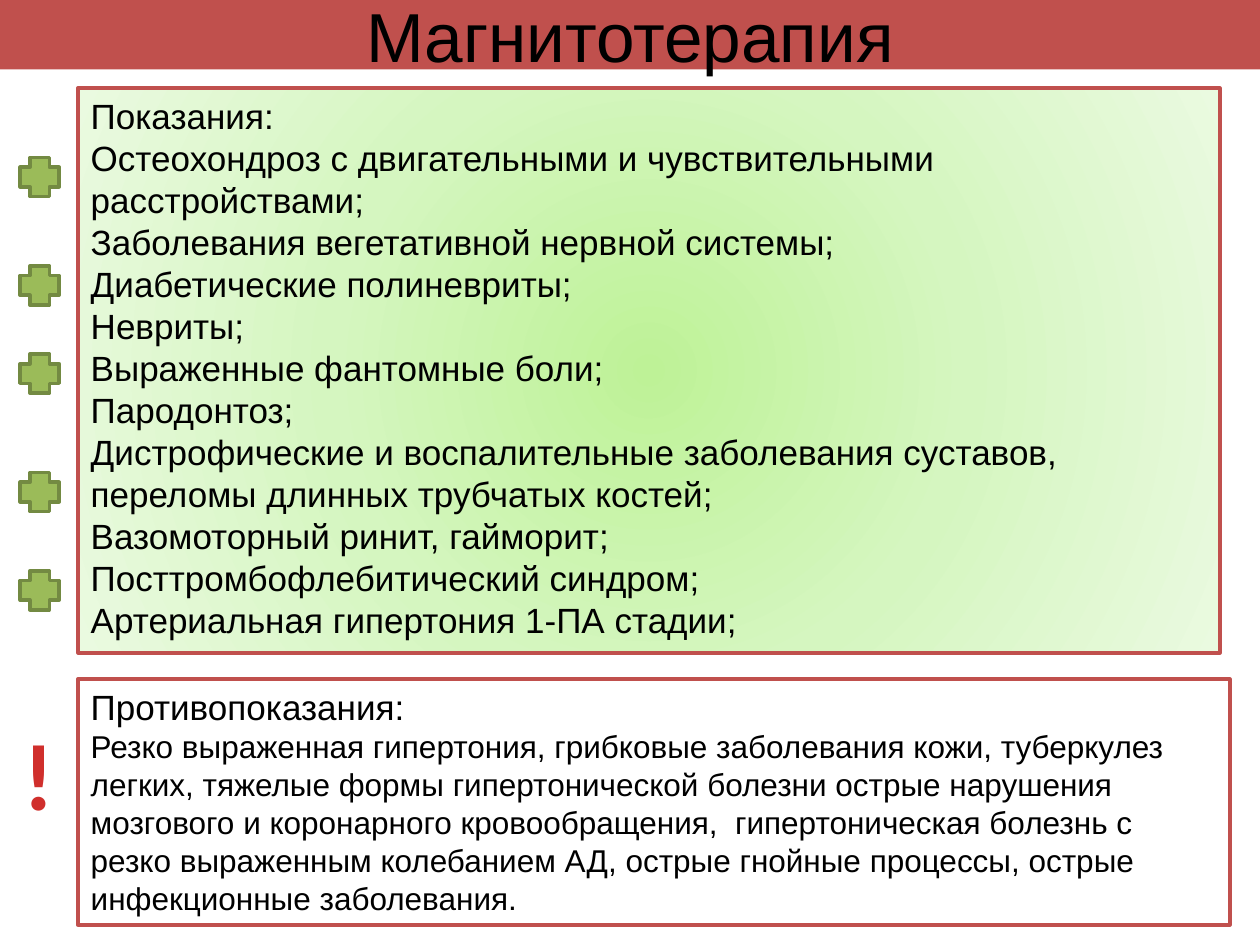
from pptx import Presentation
from pptx.dml.color import RGBColor
from pptx.enum.shapes import MSO_SHAPE
from pptx.enum.text import MSO_ANCHOR, MSO_AUTO_SIZE, PP_ALIGN
from pptx.oxml import parse_xml
from pptx.oxml.ns import nsdecls
from pptx.util import Inches, Pt

# Content
TITLE = "Магнитотерапия"
INDICATIONS = [
    "Показания:",
    "Остеохондроз с двигательными и чувствительными расстройствами;",
    "Заболевания вегетативной нервной системы;",
    "Диабетические полиневриты;",
    "Невриты;",
    "Выраженные фантомные боли;",
    "Пародонтоз;",
    "Дистрофические и воспалительные заболевания суставов, "
    "переломы длинных трубчатых костей;",
    "Вазомоторный ринит, гайморит;",
    "Посттромбофлебитический синдром;",
    "Артериальная гипертония 1-ПА стадии;",
]
CONTRAINDICATIONS = [
    "Противопоказания:",
    "Резко выраженная гипертония, грибковые заболевания кожи, туберкулез "
    "легких, тяжелые формы гипертонической болезни острые нарушения "
    "мозгового и коронарного кровообращения,  гипертоническая болезнь с "
    "резко выраженным колебанием АД, острые гнойные процессы, острые "
    "инфекционные заболевания.",
]
GREENS = [(0, "BEF297"), (50, "D5F6C0"), (100, "EAFAE0")]
RED, GREEN, DARK_GREEN = "C0504D", "9BBB59", "738A42"

# Layout in inches
BOX_LEFT = 0.62
PLUS_LEFT, PLUS_SIZE = 0.16, 0.31
PLUS_TOPS = [1.25, 2.11, 2.81, 3.75, 4.53]


def rgb(color):
    return RGBColor.from_string(color)


def place(sp, *box):
    sp.left, sp.top, sp.width, sp.height = map(Inches, box)


def outline(sp, color, width):
    sp.line.color.rgb = rgb(color)
    sp.line.width = Pt(width)


def write(sp, texts, sizes, font="Arial", color="000000", bold=False,
          align=PP_ALIGN.LEFT, anchor=MSO_ANCHOR.TOP):
    tf = sp.text_frame
    tf.word_wrap = True
    tf.auto_size = MSO_AUTO_SIZE.NONE
    tf.vertical_anchor = anchor
    for i, (text, size) in enumerate(zip(texts, sizes)):
        p = tf.paragraphs[0] if i == 0 else tf.add_paragraph()
        p.alignment = align
        p.space_before = p.space_after = Pt(0)
        p.line_spacing = 1.0
        pPr = p._p.get_or_add_pPr()
        pPr.set("marL", "0")
        pPr.set("indent", "0")
        pPr.append(parse_xml(f"<a:buNone {nsdecls('a')}/>"))
        r = p.add_run()
        r.text = text
        r.font.name, r.font.size, r.font.bold = font, Pt(size), bold
        r.font.color.rgb = rgb(color)


def radial_fill(sp, stops):
    sp.fill.gradient()
    grad = sp._element.spPr.find("{*}gradFill")
    gs = "".join(f'<a:gs pos="{pos * 1000}"><a:srgbClr val="{color}"/></a:gs>'
                 for pos, color in stops)
    center = 'l="50000" t="50000" r="50000" b="50000"'
    grad.getparent().replace(grad, parse_xml(
        f'<a:gradFill {nsdecls("a")}><a:gsLst>{gs}</a:gsLst>'
        f'<a:path path="circle"><a:fillToRect {center}/></a:path></a:gradFill>'))


prs = Presentation()
prs.slide_width, prs.slide_height = Inches(10), Inches(7.5)
s = prs.slides.add_slide(prs.slide_layouts[3])
title, indications, contraindications = list(s.placeholders)[:3]

# Title band
place(title, 0, 0, 10, 0.55)
title.fill.solid()
title.fill.fore_color.rgb = rgb(RED)
write(title, [TITLE], [39.6], align=PP_ALIGN.CENTER, anchor=MSO_ANCHOR.MIDDLE)

# Framed lists
place(indications, BOX_LEFT, 0.7, 9.06, 4.48)
radial_fill(indications, GREENS)
write(indications, INDICATIONS, [20] * len(INDICATIONS))
place(contraindications, BOX_LEFT, 5.39, 9.14, 1.95)
write(contraindications, CONTRAINDICATIONS, [20, 18])
for box in (indications, contraindications):
    outline(box, RED, 2.25)

# Warning mark
mark = s.shapes.add_textbox(0, Inches(5.63), Inches(0.61), Inches(1.01))
write(mark, ["!"], [54], font="Calibri", color="D02F2C", bold=True,
      align=PP_ALIGN.CENTER)

# Plus signs
for top in PLUS_TOPS:
    plus = s.shapes.add_shape(MSO_SHAPE.CROSS, 0, 0, 0, 0)
    place(plus, PLUS_LEFT, top, PLUS_SIZE, PLUS_SIZE)
    plus.shadow.inherit = False
    plus.fill.solid()
    plus.fill.fore_color.rgb = rgb(GREEN)
    outline(plus, DARK_GREEN, 2)

prs.save("out.pptx")
